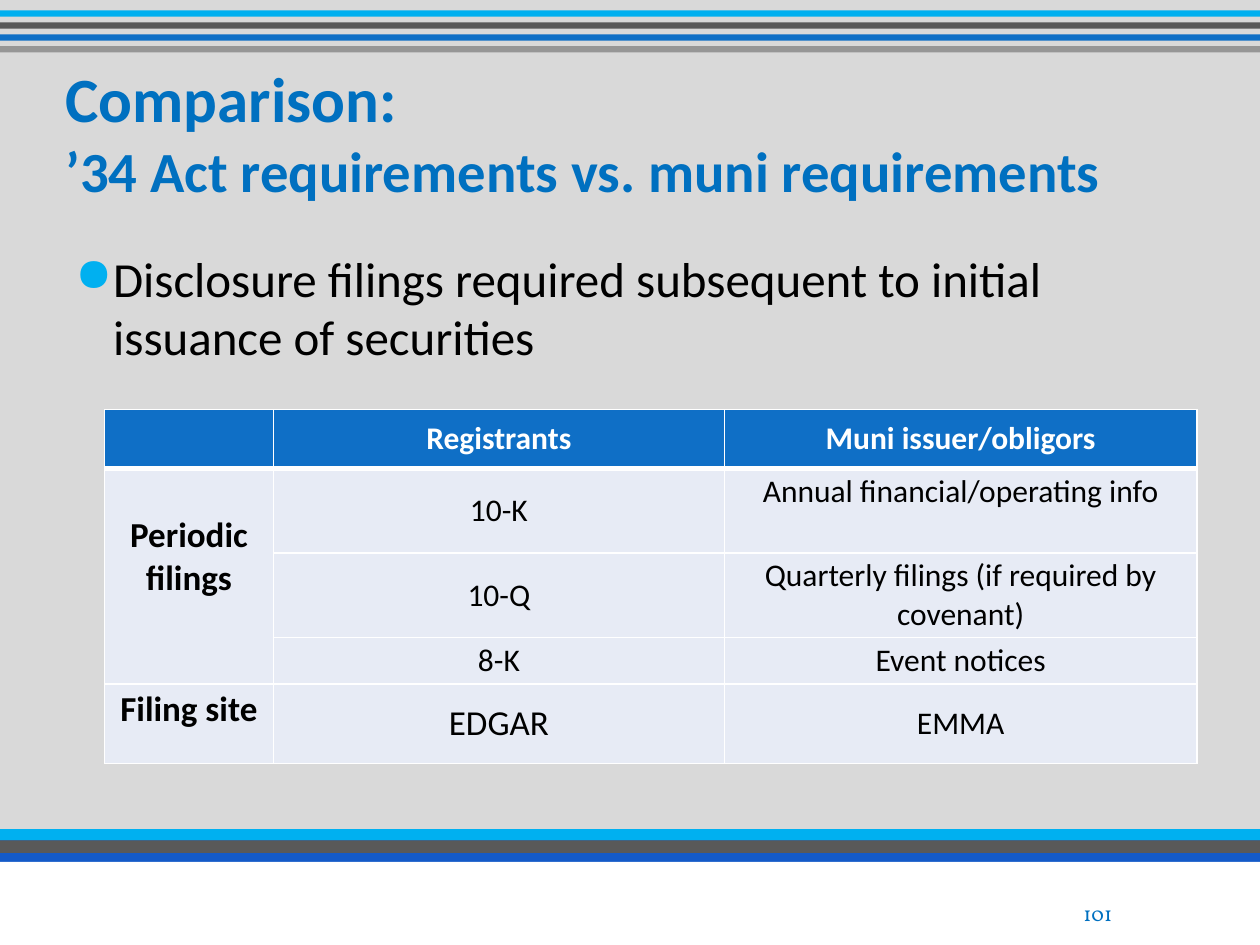
from dataclasses import dataclass

from lxml import etree
from pptx import Presentation
from pptx.dml.color import RGBColor
from pptx.enum.shapes import MSO_SHAPE
from pptx.enum.text import MSO_ANCHOR, PP_ALIGN
from pptx.oxml.ns import qn
from pptx.util import Inches, Pt


@dataclass(frozen=True)
class Theme:
    background: str = "D9D9D9"
    cyan: str = "00B0F0"
    dark: str = "595959"
    blue: str = "0F6FC6"
    grey: str = "969696"
    royal: str = "145AC8"
    white: str = "FFFFFF"
    black: str = "000000"
    accent: str = "0070C0"
    cell: str = "E7EBF5"
    font: str = "Calibri"
    number_font: str = "Vollkorn"
    title: float = 36
    subtitle: float = 32.4
    body: float = 28
    label: float = 20
    entry: float = 18
    number: float = 12


@dataclass(frozen=True)
class Entry:
    text: str
    size: float
    bold: bool = False
    anchor: MSO_ANCHOR = MSO_ANCHOR.MIDDLE
    top_margin: float = 0.3


COLUMNS, ROWS = 100, 75


class Deck:
    """Draws on one slide; lengths are cells of a 100 by 75 grid."""

    def __init__(self, theme):
        self.theme = theme
        self.file = Presentation()
        self.file.slide_width, self.file.slide_height = Inches(10), Inches(7.5)
        self.slide = self.file.slides.add_slide(self.file.slide_layouts[5])
        background = self.slide.background.fill
        background.solid()
        background.fore_color.rgb = RGBColor.from_string(theme.background)

    def across(self, columns):
        return round(self.file.slide_width * columns / COLUMNS)

    def down(self, rows):
        return round(self.file.slide_height * rows / ROWS)

    def area(self, left, top, width, height):
        return self.across(left), self.down(top), self.across(width), self.down(height)

    def style(self, paragraph, size, color, bold=False, family=None):
        font = paragraph.font
        font.name = family or self.theme.font
        font.size, font.bold = Pt(size), bold
        font.color.rgb = RGBColor.from_string(color)

    def bar(self, top, height, color):
        bar = self.slide.shapes.add_shape(
            MSO_SHAPE.RECTANGLE, *self.area(0, top, COLUMNS, height))
        bar.shadow.inherit = False
        bar.fill.solid()
        bar.fill.fore_color.rgb = RGBColor.from_string(color)
        bar.line.fill.background()

    def title(self, heading, subheading, area):
        title = self.slide.shapes.title
        title.left, title.top, title.width, title.height = self.area(*area)
        title.text_frame.vertical_anchor = MSO_ANCHOR.MIDDLE
        paragraph = title.text_frame.paragraphs[0]
        paragraph.alignment = PP_ALIGN.LEFT
        self.style(paragraph, self.theme.title, self.theme.accent, True)
        paragraph.add_run().text = heading
        paragraph.add_line_break()
        second = paragraph.add_run()
        second.text = subheading
        second.font.size = Pt(self.theme.subtitle)

    def text(self, words, area, size, color, family=None, bullet=False, wrap=True):
        frame = self.slide.shapes.add_textbox(*self.area(*area)).text_frame
        frame.word_wrap = wrap
        paragraph = frame.paragraphs[0]
        paragraph.text = words
        if bullet:
            self.add_bullet(paragraph)
        self.style(paragraph, size, color, family=family)

    def add_bullet(self, paragraph):
        properties = paragraph._p.get_or_add_pPr()
        indent = self.across(3)
        properties.set("marL", str(indent))
        properties.set("indent", str(-indent))
        color = etree.SubElement(properties, qn("a:buClr"))
        etree.SubElement(color, qn("a:srgbClr"), val=self.theme.cyan)
        etree.SubElement(properties, qn("a:buSzPct"), val="95000")
        etree.SubElement(properties, qn("a:buChar"), char="●")

    def border(self, cell, **widths):
        properties = cell._tc.get_or_add_tcPr()
        for side in "LRTB":
            line = etree.SubElement(properties, qn(f"a:ln{side}"),
                                    w=str(Pt(widths.get(side, 1))))
            fill = etree.SubElement(line, qn("a:solidFill"))
            etree.SubElement(fill, qn("a:srgbClr"), val=self.theme.white)

    def fill_entry(self, cell, entry, color):
        cell.margin_left = cell.margin_right = self.across(0.6)
        cell.margin_top, cell.margin_bottom = self.down(entry.top_margin), self.down(0.3)
        cell.vertical_anchor = entry.anchor
        paragraph = cell.text_frame.paragraphs[0]
        paragraph.text = entry.text
        paragraph.alignment = PP_ALIGN.CENTER
        self.style(paragraph, entry.size, color, entry.bold)

    def table(self, entries, left, top, widths, heights, merged):
        """Place entries by row; None marks a cell covered by a merge."""
        theme = self.theme
        table = self.slide.shapes.add_table(
            len(heights), len(widths),
            *self.area(left, top, sum(widths), sum(heights))).table
        for column, width in zip(table.columns, widths):
            column.width = self.across(width)
        for row, height in zip(table.rows, heights):
            row.height = self.down(height)
        for r, row in enumerate(entries):
            for c, entry in enumerate(row):
                cell = table.cell(r, c)
                self.border(cell, **({"B": 3} if r == 0 else {"T": 3} if r == 1 else {}))
                cell.fill.solid()
                cell.fill.fore_color.rgb = RGBColor.from_string(
                    theme.cell if r else theme.blue)
                if entry:
                    self.fill_entry(cell, entry, theme.black if r else theme.white)
        first, last = merged
        table.cell(*first).merge(table.cell(*last))


def main():
    theme = Theme()
    deck = Deck(theme)

    top_stripes = (theme.cyan, theme.dark, theme.blue, theme.grey)
    for i, color in enumerate(top_stripes):
        deck.bar(0.82 + 0.95 * i, 0.5, color)
    footer_bands = ((65.8, 1.1, theme.cyan), (66.7, 1.8, theme.royal),
                    (66.7, 1, theme.dark), (68.4, 6.6, theme.white))
    for band in footer_bands:
        deck.bar(*band)

    deck.title("Comparison:", "’34 Act requirements vs. muni requirements",
               (4.2, 4.2, 90, 12.5))
    deck.text("Disclosure filings required subsequent to initial issuance of securities",
              (5, 19.2, 90, 11), theme.body, theme.black, bullet=True)

    entry, label, top = theme.entry, theme.label, MSO_ANCHOR.TOP
    filings = [
        [None, Entry("Registrants", entry, True),
         Entry("Muni issuer/obligors", entry, True)],
        [Entry("Periodic filings", label, True, top, 3.6), Entry("10-K", entry),
         Entry("Annual financial/operating info", entry, anchor=top)],
        [None, Entry("10-Q", entry),
         Entry("Quarterly filings (if required by covenant)", entry)],
        [None, Entry("8-K", entry), Entry("Event notices", entry)],
        [Entry("Filing site", label, True, top), Entry("EDGAR", label),
         Entry("EMMA", entry)],
    ]
    deck.table(filings, 8.3, 32.5, (13.4, 35.8, 37.5), (4.7, 6.7, 6.7, 3.7, 6.3),
               merged=((1, 0), (3, 0)))
    deck.text("101", (85, 71, 4.4, 3), theme.number, theme.accent,
              theme.number_font, wrap=False)
    deck.file.save("out.pptx")


if __name__ == "__main__":
    main()
